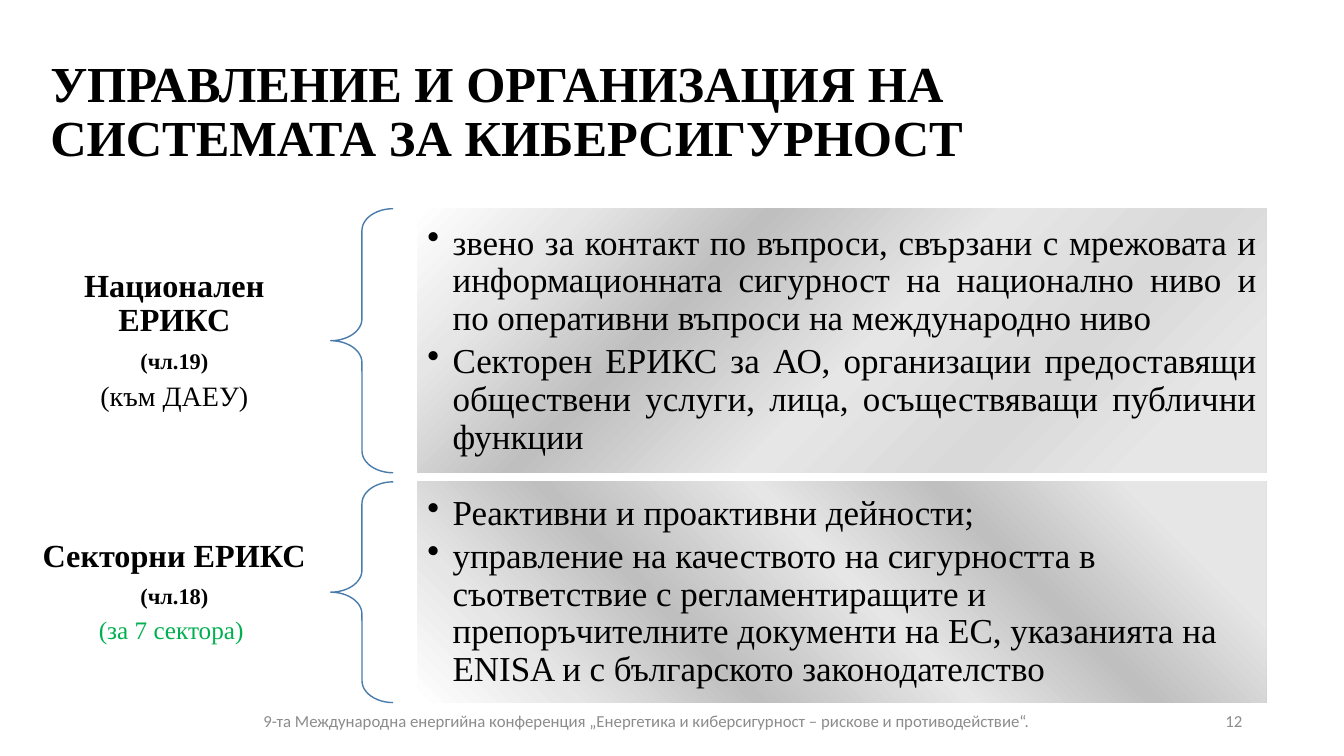
import dataclasses

import lxml.etree
import pptx
import pptx.dml.color
import pptx.enum.shapes
import pptx.enum.text
import pptx.oxml.ns
import pptx.util

PX = 9144
ALIGN = pptx.enum.text.PP_ALIGN
SHAPES = pptx.enum.shapes.MSO_SHAPE


@dataclasses.dataclass(frozen=True)
class Theme:
    """Colours, fonts and type sizes of the deck."""
    serif: str = "Times New Roman"
    sans: str = "Calibri"
    ink: str = "000000"
    green: str = "00B050"
    grey: str = "8C8C8C"
    brace: str = "497CAB"
    title: int = 36
    body: int = 25
    label: int = 23
    article: int = 16
    note: int = 20
    small_note: int = 18
    footer: int = 12


THEME = Theme()
SILVER = [(0, "FFFFFF"), (15, "E6E6E6"), (32, "BFBFBF"), (53, "E6E6E6"), (72, "D9D9D9"), (88, "E6E6E6")]
STEEL = [(0, "FFFFFF"), (15, "E6E6E6"), (32, "BFBFBF"), (52, "E6E6E6"), (69, "BFBFBF"), (87, "E6E6E6")]


def px(*lengths):
    """Turn px lengths into EMU."""
    return [pptx.util.Emu(length * PX) for length in lengths]


def rgb(colour):
    """Return a colour object for a hex string."""
    return pptx.dml.color.RGBColor.from_string(colour)


def prepare_frame(shape, inset_x=10, inset_y=5):
    """Wrap, centre vertically and inset the text frame of a shape."""
    frame = shape.text_frame
    frame.word_wrap = True
    frame.vertical_anchor = pptx.enum.text.MSO_ANCHOR.MIDDLE
    frame.margin_left, frame.margin_top, frame.margin_right, frame.margin_bottom = px(
        inset_x, inset_y, inset_x, inset_y)
    return frame


def write(frame, text, size, colour=THEME.ink, font=THEME.serif, bold=False,
          align=ALIGN.LEFT, line=0.9, after=0, bullet=False):
    """Add one formatted paragraph to a text frame."""
    paragraph = frame.paragraphs[0] if not frame.text else frame.add_paragraph()
    paragraph.alignment = align
    paragraph.line_spacing = line
    paragraph.space_after = pptx.util.Pt(round(size * after, 2))
    if bullet:
        properties = paragraph._p.get_or_add_pPr()
        indent = px(25)[0]
        properties.set("marL", str(indent))
        properties.set("indent", str(-indent))
        lxml.etree.SubElement(properties, pptx.oxml.ns.qn("a:buChar"), char="•")
    run = paragraph.add_run()
    run.text = text
    run.font.size = pptx.util.Pt(size)
    run.font.name = font
    run.font.bold = bold
    run.font.color.rgb = rgb(colour)


def fill_gradient(shape, stops, angle):
    """Fill a shape with a linear gradient of several stops."""
    shape.fill.gradient()
    shape.fill.gradient_angle = angle
    qn = pptx.oxml.ns.qn
    stop_list = shape._element.spPr.find(".//" + qn("a:gsLst"))
    stop_list.clear()
    for position, colour in stops:
        stop = lxml.etree.SubElement(stop_list, qn("a:gs"), pos=str(position * 1000))
        lxml.etree.SubElement(stop, qn("a:srgbClr"), val=colour)


def add_line_of_text(slide, box, text, size, **style):
    """Add a text box holding one paragraph."""
    frame = prepare_frame(slide.shapes.add_textbox(*px(*box)))
    write(frame, text, size, **style)


def add_label(slide, box, lines):
    """Add the centred label on the left of a brace."""
    frame = prepare_frame(slide.shapes.add_textbox(*px(*box)), 18, 6)
    for text, size, style in lines:
        write(frame, text, size, align=ALIGN.CENTER, after=0.35, **style)


def add_brace(slide, box):
    """Add the left brace that ties a label to its panel."""
    brace = slide.shapes.add_shape(SHAPES.LEFT_BRACE, *px(*box))
    brace.shadow.inherit = False
    brace.adjustments[0] = 0.35
    brace.adjustments[1] = 0.5
    brace.fill.background()
    brace.line.color.rgb = rgb(THEME.brace)
    brace.line.width = pptx.util.Pt(1)


def add_panel(slide, box, bullets, stops, angle, align):
    """Add the gradient panel with its bullets."""
    panel = slide.shapes.add_shape(SHAPES.RECTANGLE, *px(*box))
    panel.shadow.inherit = False
    panel.line.fill.background()
    fill_gradient(panel, stops, angle)
    frame = prepare_frame(panel, 10, 10)
    for text in bullets:
        write(frame, text, THEME.body, align=align, after=0.15, bullet=True)


def add_team_row(slide, box, label, bullets, stops, angle, align):
    """Add label, brace and panel side by side within a box."""
    left, top, width, height = box
    label_width, brace_width, gap = 310, 62, 24
    panel_offset = label_width + brace_width + gap
    add_label(slide, (left, top, label_width, height), label)
    add_brace(slide, (left + label_width, top, brace_width, height))
    add_panel(slide, (left + panel_offset, top, width - panel_offset, height),
              bullets, stops, angle, align)


def add_footer(slide, box, text, number):
    """Add the conference name and the slide number."""
    left, top, width, height = box
    style = {"font": THEME.sans, "colour": THEME.grey, "line": 1.0}
    add_line_of_text(slide, (left, top, 1125, height), text, THEME.footer,
                     align=ALIGN.CENTER, **style)
    add_line_of_text(slide, (left + width - 300, top, 300, height), number, THEME.footer,
                     align=ALIGN.RIGHT, **style)


def build_teams_slide(presentation):
    """Build the slide on the national and sector response teams."""
    slide = presentation.slides.add_slide(presentation.slide_layouts[6])
    add_team_row(
        slide, (18, 207, 1238, 262),
        [("Национален ЕРИКС", THEME.label, {"bold": True}),
         ("(чл.19)", THEME.article, {"bold": True}),
         ("(към ДАЕУ)", THEME.note, {})],
        ["звено за контакт по въпроси, свързани с мрежовата и информационната сигурност "
         "на национално ниво и по оперативни въпроси на международно ниво",
         "Секторен ЕРИКС за АО, организации предоставящи обществени услуги, лица, "
         "осъществяващи публични функции"],
        SILVER, 315, ALIGN.JUSTIFY)
    add_team_row(
        slide, (18, 478, 1238, 219),
        [("Секторни ЕРИКС", THEME.label, {"bold": True}),
         ("(чл.18)", THEME.article, {"bold": True}),
         ("(за 7 сектора) ", THEME.small_note, {"colour": THEME.green})],
        ["Реактивни и проактивни дейности;",
         "управление на качеството на сигурността в съответствие с регламентиращите и "
         "препоръчителните документи на ЕС, указанията на ENISA и с българското "
         "законодателство"],
        STEEL, 45, ALIGN.LEFT)
    add_line_of_text(slide, (40, 84, 1202, 57),
                     "УПРАВЛЕНИЕ И ОРГАНИЗАЦИЯ НА СИСТЕМАТА ЗА КИБЕРСИГУРНОСТ",
                     THEME.title, bold=True)
    add_footer(slide, (79, 692, 1163, 47),
               "9-та Международна енергийна конференция „Eнергетика и киберсигурност – "
               "рискове и противодействие“.", "12")


def main():
    """Create the presentation and save it."""
    presentation = pptx.Presentation()
    presentation.slide_width, presentation.slide_height = px(1333, 750)
    build_teams_slide(presentation)
    presentation.save("out.pptx")


if __name__ == "__main__":
    main()
